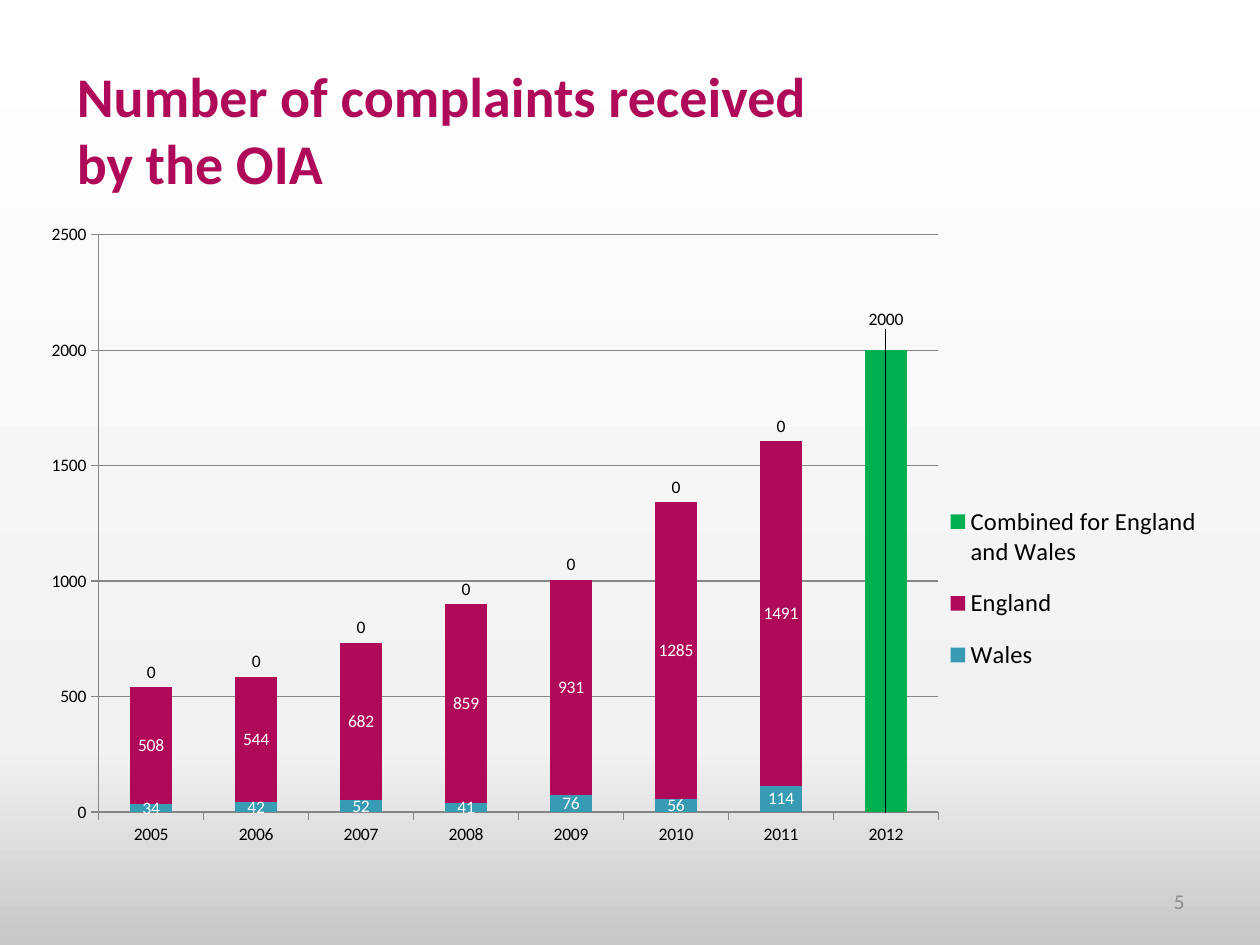
from copy import deepcopy

from pptx import Presentation
from pptx.chart.data import CategoryChartData
from pptx.dml.color import RGBColor
from pptx.enum.chart import XL_CHART_TYPE as ChartType
from pptx.enum.chart import XL_LABEL_POSITION as LabelPos
from pptx.enum.chart import XL_LEGEND_POSITION as LegendPos
from pptx.enum.chart import XL_TICK_MARK as Tick
from pptx.enum.text import MSO_ANCHOR as Anchor
from pptx.enum.text import PP_ALIGN as Align
from pptx.oxml import parse_xml
from pptx.oxml.ns import nsdecls, qn
from pptx.util import Inches, Pt

WHITE = RGBColor(0xFF, 0xFF, 0xFF)
PALE_GREY = RGBColor(0xF2, 0xF2, 0xF2)
MID_GREY = RGBColor(0xC7, 0xC7, 0xC7)
LINE_GREY = RGBColor(0x86, 0x86, 0x86)
NUMBER_GREY = RGBColor(0x8C, 0x8C, 0x8C)
BLACK = RGBColor(0, 0, 0)
MAGENTA = RGBColor(0xAF, 0x0A, 0x5A)
TEAL = RGBColor(0x37, 0x9B, 0xB4)
GREEN = RGBColor(0x00, 0xB0, 0x50)
FONT = "Calibri"

YEARS = [str(year) for year in range(2005, 2013)]
# name, yearly complaints, bar colour, label colour, label position
COMPLAINTS = [
    ("Wales", (34, 42, 52, 41, 76, 56, 114, 0), TEAL, WHITE, LabelPos.CENTER),
    ("England", (508, 544, 682, 859, 931, 1285, 1491, 0), MAGENTA, WHITE,
     LabelPos.CENTER),
    ("Combined for England and Wales", (0,) * 7 + (2000,), GREEN, BLACK,
     LabelPos.INSIDE_BASE),
]
LAST_YEAR = len(YEARS) - 1


def set_format(target, values):
    for name, value in values.items():
        setattr(target, name, value)


def set_font(font, color, **values):
    set_format(font, {"name": FONT, **values})
    font.color.rgb = color


def paint_background(slide):
    fill = slide.background.fill
    fill.gradient()
    fill.gradient_angle = 270
    stops = slide.element.find(".//" + qn("a:gsLst"))
    stops.append(deepcopy(stops[-1]))
    shades = ((0, WHITE), (0.79, PALE_GREY), (1, MID_GREY))
    for stop, (position, color) in zip(fill.gradient_stops, shades):
        stop.position = position
        stop.color.rgb = color


def add_heading(slide, box):
    heading = slide.shapes.title
    set_format(heading, dict(zip(("left", "top", "width", "height"), box)))
    frame = heading.text_frame
    set_format(frame, {"word_wrap": True, "vertical_anchor": Anchor.TOP})
    frame.text = "Number of complaints received by the OIA"
    paragraph = frame.paragraphs[0]
    paragraph.alignment = Align.LEFT
    set_font(paragraph.runs[0].font, MAGENTA, size=Pt(32), bold=True)


def manual_layout(values, inner=False):
    """Layout element holding fractions of the chart's size."""
    target = '<c:layoutTarget val="inner"/>' if inner else ""
    modes = ('<c:xMode val="edge"/><c:yMode val="edge"/>'
             if len(values) == 4 else "")
    parts = "".join(f'<c:{key} val="{value}"/>' for key, value in values.items())
    return parse_xml(f'<c:layout {nsdecls("c")}><c:manualLayout>{target}{modes}'
                     f'{parts}</c:manualLayout></c:layout>')


def place(parent, layout, before):
    for old in parent.findall(qn("c:layout")):
        parent.remove(old)
    parent.find(qn(before)).addprevious(layout)


def style_axis(axis):
    set_format(axis, {"major_tick_mark": Tick.OUTSIDE,
                      "minor_tick_mark": Tick.NONE})
    set_font(axis.tick_labels.font, BLACK, size=Pt(10))
    axis.format.line.color.rgb = LINE_GREY
    axis.format.line.width = Pt(0.75)


def style_series(series, color, label_color, position):
    series.format.fill.solid()
    series.format.fill.fore_color.rgb = color
    series.invert_if_negative = False
    labels = series.data_labels
    set_format(labels, {"show_value": True, "position": position})
    set_font(labels.font, label_color, size=Pt(10))


def hide_last_label(series):
    series.data_labels._element.insert(0, parse_xml(
        f'<c:dLbl {nsdecls("c")}><c:idx val="{LAST_YEAR}"/>'
        '<c:delete val="1"/></c:dLbl>'))


def raise_last_label(series):
    """Lift the label from the foot of the bar to above its top."""
    label = series.points[LAST_YEAR].data_label
    label.position = LabelPos.INSIDE_BASE
    set_font(label.font, BLACK, size=Pt(10))
    element = series.data_labels._element.find(qn("c:dLbl"))
    element.find(qn("c:idx")).addnext(manual_layout({"x": 0, "y": -0.74}))


def add_complaints_chart(slide, box):
    data = CategoryChartData()
    data.categories = YEARS
    for name, counts, *_ in COMPLAINTS:
        data.add_series(name, counts)
    chart = slide.shapes.add_chart(ChartType.COLUMN_STACKED, *box, data).chart
    chart.has_title = False
    set_font(chart.font, BLACK, size=Pt(10))

    # Bars and their labels
    plot = chart.plots[0]
    set_format(plot, {"gap_width": 150, "overlap": 100,
                      "vary_by_categories": False})
    for series, (_, _, *look) in zip(plot.series, COMPLAINTS):
        style_series(series, *look)
    wales, england, combined = plot.series
    hide_last_label(wales)
    hide_last_label(england)
    raise_last_label(combined)

    # Axes
    style_axis(chart.category_axis)
    counts_axis = chart.value_axis
    style_axis(counts_axis)
    set_format(counts_axis, {"minimum_scale": 0, "maximum_scale": 2500,
                             "major_unit": 500, "has_major_gridlines": True})
    grid = counts_axis.major_gridlines.format.line
    grid.color.rgb = LINE_GREY
    grid.width = Pt(0.75)

    # Legend and plot area
    chart.has_legend = True
    legend = chart.legend
    set_format(legend, {"position": LegendPos.RIGHT, "include_in_layout": False})
    set_font(legend.font, BLACK, size=Pt(14))
    place(legend._element,
          manual_layout({"x": 0.77, "y": 0.42, "w": 0.23, "h": 0.32}),
          "c:overlay")
    plot_area = chart.element.find(".//" + qn("c:plotArea"))
    place(plot_area,
          manual_layout({"x": 0.054, "y": 0.032, "w": 0.716, "h": 0.895}, True),
          "c:barChart")


def add_page_number(slide, box):
    frame = slide.shapes.add_textbox(*box).text_frame
    set_format(frame, {"word_wrap": True, "vertical_anchor": Anchor.MIDDLE})
    frame.text = "5"
    paragraph = frame.paragraphs[0]
    paragraph.alignment = Align.RIGHT
    set_font(paragraph.runs[0].font, NUMBER_GREY, size=Pt(12))


def main():
    deck = Presentation()
    set_format(deck, {"slide_width": Inches(10), "slide_height": Inches(7.5)})
    slide = deck.slides.add_slide(deck.slide_layouts[5])
    paint_background(slide)
    add_heading(slide, [Inches(n) for n in (0.51, 0.44, 6.46, 0.71)])
    add_complaints_chart(slide, [Inches(n) for n in (0.28, 1.7, 9.31, 5.12)])
    add_page_number(slide, [Inches(n) for n in (7.17, 6.95, 2.33, 0.4)])
    deck.save("out.pptx")


if __name__ == "__main__":
    main()
